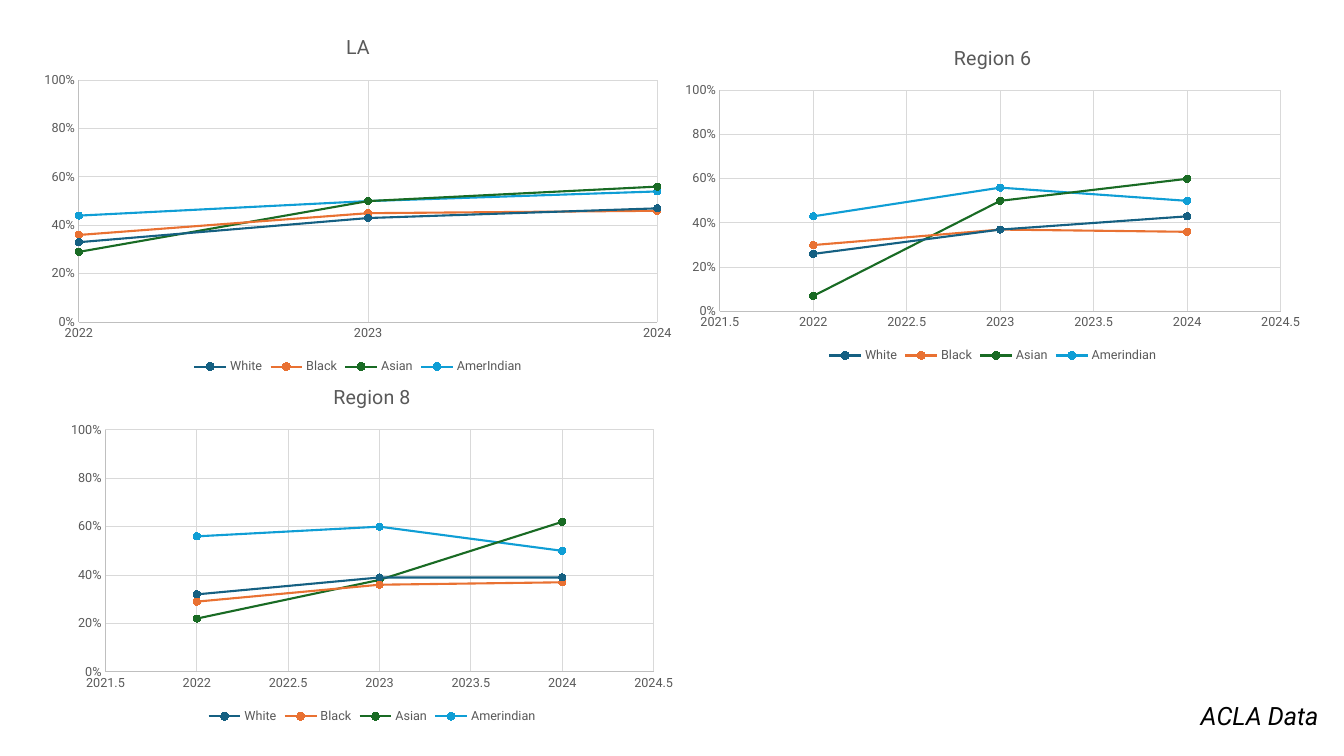
from pptx import Presentation
from pptx.chart.data import XyChartData
from pptx.dml.color import RGBColor
from pptx.enum.chart import XL_CHART_TYPE, XL_LEGEND_POSITION, XL_MARKER_STYLE, XL_TICK_MARK
from pptx.enum.text import MSO_AUTO_SIZE
from pptx.util import Inches, Pt

SLIDE_WIDTH, SLIDE_HEIGHT = Inches(13.33), Inches(7.5)
FONT = "Roboto"
GREY, AXIS_GREY, GRID_GREY = "595959", "BFBFBF", "D9D9D9"
GROUP_COLOURS = ["156082", "E97132", "196B24", "0F9ED5"]
YEARS = [2022, 2023, 2024]

# Name, place in percent of the slide, year axis (min, max, step), shares by group
REGIONS = [
    ("LA", (2.33, 2.27, 48.61, 47.73), (2022, 2024, 1), {
        "White": (0.33, 0.43, 0.47),
        "Black": (0.36, 0.45, 0.46),
        "Asian": (0.29, 0.5, 0.56),
        "AmerIndian": (0.44, 0.5, 0.54)}),
    ("Region 6", (50.04, 3.73, 47.64, 44.8), (2021.5, 2024.5, 0.5), {
        "White": (0.26, 0.37, 0.43),
        "Black": (0.3, 0.37, 0.36),
        "Asian": (0.07, 0.5, 0.6),
        "Amerindian": (0.43, 0.56, 0.5)}),
    ("Region 8", (4.35, 48.53, 46.66, 47.73), (2021.5, 2024.5, 0.5), {
        "White": (0.32, 0.39, 0.39),
        "Black": (0.29, 0.36, 0.37),
        "Asian": (0.22, 0.38, 0.62),
        "Amerindian": (0.56, 0.6, 0.5)}),
]


def place(left, top, width, height):
    """Turn percentages of the slide into lengths."""
    return (int(SLIDE_WIDTH * left / 100), int(SLIDE_HEIGHT * top / 100),
            int(SLIDE_WIDTH * width / 100), int(SLIDE_HEIGHT * height / 100))


def colour(target, hex_code):
    target.rgb = RGBColor.from_string(hex_code)


def style_font(font, size, hex_code):
    font.name, font.size, font.bold = FONT, Pt(size), False
    colour(font.color, hex_code)


def style_line(line, width, hex_code):
    line.width = Pt(width)
    colour(line.color, hex_code)


def style_axis(axis, scale, number_format):
    axis.minimum_scale, axis.maximum_scale, axis.major_unit = scale
    axis.major_tick_mark = axis.minor_tick_mark = XL_TICK_MARK.NONE
    axis.has_major_gridlines = True
    style_line(axis.major_gridlines.format.line, 0.75, GRID_GREY)
    style_line(axis.format.line, 0.75, AXIS_GREY)
    style_font(axis.tick_labels.font, 9, GREY)
    axis.tick_labels.number_format = number_format
    axis.tick_labels.number_format_is_linked = False


def style_group(group, hex_code):
    group.smooth = False
    style_line(group.format.line, 1.5, hex_code)
    marker = group.marker
    marker.style, marker.size = XL_MARKER_STYLE.CIRCLE, 5
    marker.format.fill.solid()
    colour(marker.format.fill.fore_color, hex_code)
    style_line(marker.format.line, 0.75, hex_code)


def add_region_chart(slide, region, position, year_scale, shares_by_group):
    data = XyChartData(number_format="0%")
    for group_name, shares in shares_by_group.items():
        group = data.add_series(group_name)
        for year, share in zip(YEARS, shares):
            group.add_data_point(year, share)
    chart = slide.shapes.add_chart(
        XL_CHART_TYPE.XY_SCATTER_LINES, *place(*position), data).chart
    style_font(chart.font, 10, "000000")

    # Title and legend
    chart.has_title = True
    heading = chart.chart_title.text_frame
    heading.text = region
    style_font(heading.paragraphs[0].runs[0].font, 14, GREY)
    chart.chart_title.include_in_layout = False
    chart.has_legend = True
    chart.legend.position = XL_LEGEND_POSITION.BOTTOM
    chart.legend.include_in_layout = False
    style_font(chart.legend.font, 9, GREY)

    # Axes and lines
    style_axis(chart.category_axis, year_scale, "General")
    style_axis(chart.value_axis, (0, 1, 0.2), "0%")
    chart.plots[0].vary_by_categories = False
    for group, hex_code in zip(chart.plots[0].series, GROUP_COLOURS):
        style_group(group, hex_code)


def add_data_note(slide, wording, position):
    note = slide.shapes.add_textbox(*place(*position)).text_frame
    note.word_wrap = True
    note.auto_size = MSO_AUTO_SIZE.SHAPE_TO_FIT_TEXT
    note.text = wording
    font = note.paragraphs[0].runs[0].font
    style_font(font, 18, "000000")
    font.italic = True


def main():
    deck = Presentation()
    deck.slide_width, deck.slide_height = SLIDE_WIDTH, SLIDE_HEIGHT
    slide = deck.slides.add_slide(deck.slide_layouts[6])
    for region in REGIONS:
        add_region_chart(slide, *region)
    add_data_note(slide, "ACLA Data", (88.6, 92, 12.23, 5.33))
    deck.save("out.pptx")


if __name__ == "__main__":
    main()
